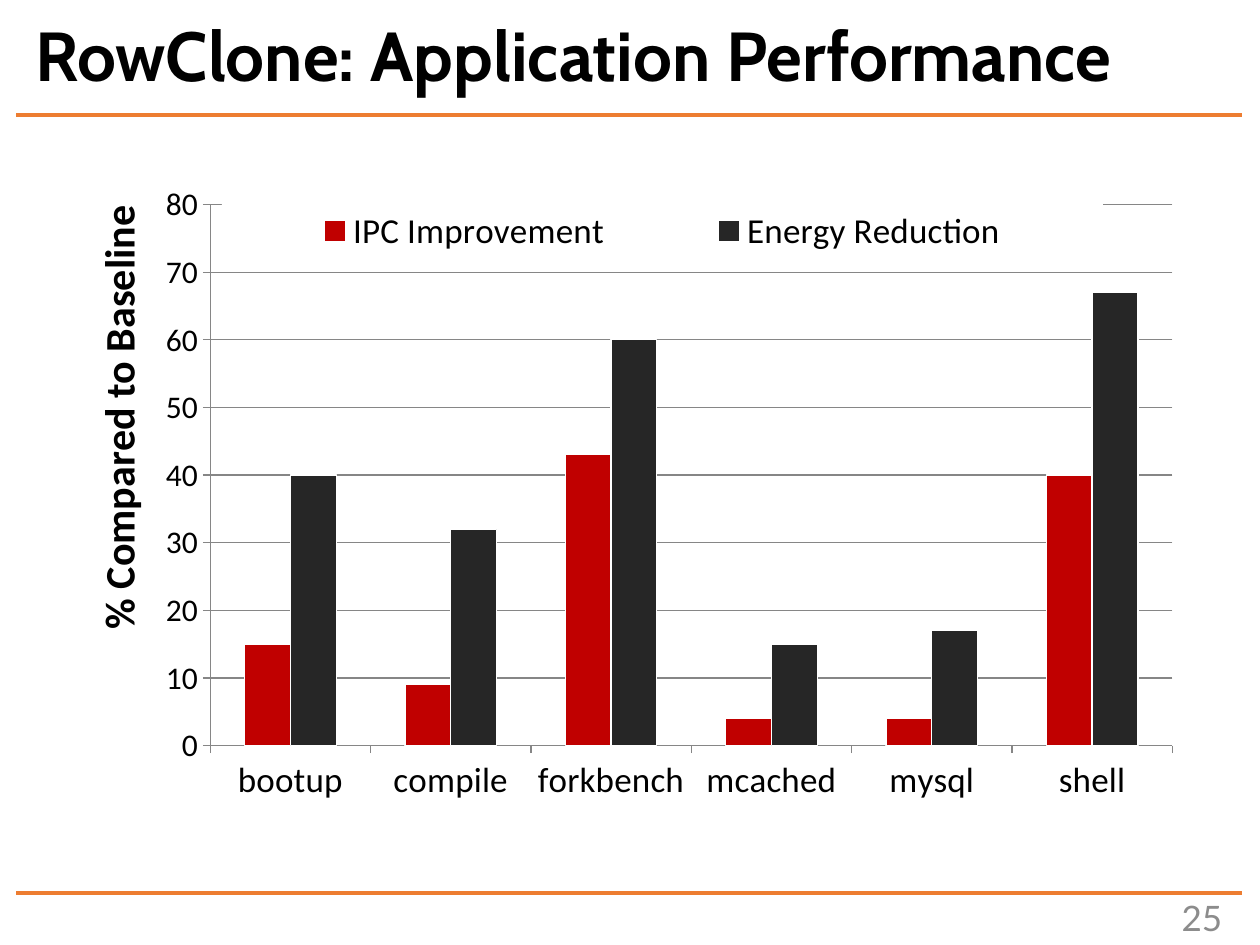
"""Build the RowClone application performance slide with its clustered column chart."""
from lxml import etree
from pptx import Presentation
from pptx import util as u
from pptx.chart import data as cd
from pptx.dml.color import RGBColor
from pptx.enum import chart as ec, shapes, text
from pptx.oxml.ns import qn

Pt = u.Pt
COLORS = {"accent": "ED7D31", "ipc": "C00000", "energy": "262626", "grid": "868686",
          "number": "8C8C8C", "black": "000000", "white": "FFFFFF"}


def rgb(name):
    return RGBColor.from_string(COLORS[name])


def set_layout(parent, index, **values):
    for old in parent.findall(qn("c:layout")):
        parent.remove(old)
    layout = etree.Element(qn("c:layout"))
    manual = etree.SubElement(layout, qn("c:manualLayout"))
    for tag, value in values.items():
        etree.SubElement(manual, qn("c:" + tag)).set("val", str(value))
    parent.insert(index, layout)


prs = Presentation()
prs.slide_width, prs.slide_height = Pt(720), Pt(540)
s = prs.slides.add_slide(prs.slide_layouts[5])

title = s.shapes.title
title.left, title.top, title.width, title.height = Pt(13), Pt(10), Pt(700.5), Pt(47.5)
tf = title.text_frame
tf.auto_size = text.MSO_AUTO_SIZE.NONE
tf.vertical_anchor = text.MSO_ANCHOR.MIDDLE
p = tf.paragraphs[0]
p.alignment = text.PP_ALIGN.LEFT
p.line_spacing = 0.9
r = p.add_run()
r.text = "RowClone: Application Performance"
r.font.name, r.font.size, r.font.bold = "Cabin", Pt(39.6), True
r.font.color.rgb = rgb("black")

for y in (65.5, 510.5):
    rule = s.shapes.add_connector(shapes.MSO_CONNECTOR.STRAIGHT, Pt(9.4), Pt(y), Pt(710), Pt(y))
    rule.line.color.rgb = rgb("accent")
    rule.line.width = Pt(2.25)
    etree.SubElement(rule._element.spPr, qn("a:effectLst"))

number = s.shapes.add_textbox(Pt(628), Pt(510), Pt(77.5), Pt(28.75))
tf = number.text_frame
tf.word_wrap = True
tf.vertical_anchor = text.MSO_ANCHOR.MIDDLE
p = tf.paragraphs[0]
p.alignment = text.PP_ALIGN.RIGHT
r = p.add_run()
r.text = "25"
r.font.name, r.font.size = "Lato", Pt(20)
r.font.color.rgb = rgb("number")

data = cd.CategoryChartData()
data.categories = ["bootup", "compile", "forkbench", "mcached", "mysql", "shell"]
data.add_series("IPC Improvement", (15, 9, 43, 4, 4, 40))
data.add_series("Energy Reduction", (40, 32, 60, 15, 17, 67))
chart = s.shapes.add_chart(ec.XL_CHART_TYPE.COLUMN_CLUSTERED,
                           Pt(27.4), Pt(98), Pt(662.4), Pt(379.4), data).chart
chart.has_title = False
chart.font.name, chart.font.size = "Calibri", Pt(18)
chart.font.color.rgb = rgb("black")

plot = chart.plots[0]
plot.gap_width, plot.overlap, plot.vary_by_categories = 150, 0, False
for series, name in zip(plot.series, ("ipc", "energy")):
    series.format.fill.solid()
    series.format.fill.fore_color.rgb = rgb(name)
    series.format.line.color.rgb = rgb("white")
    series.format.line.width = Pt(0.75)

cat_axis, val_axis = chart.category_axis, chart.value_axis
cat_axis.tick_labels.font.size = Pt(20)
val_axis.tick_labels.font.size = Pt(18)
val_axis.minimum_scale, val_axis.maximum_scale, val_axis.major_unit = 0, 80, 10
val_axis.has_major_gridlines = True
for axis in (cat_axis, val_axis):
    axis.major_tick_mark = ec.XL_TICK_MARK.OUTSIDE
    axis.format.line.color.rgb = rgb("grid")
    axis.format.line.width = Pt(0.75)
val_axis.major_gridlines.format.line.color.rgb = rgb("grid")
val_axis.major_gridlines.format.line.width = Pt(0.75)

axis_title = val_axis.axis_title
tf = axis_title.text_frame
r = tf.paragraphs[0].add_run()
r.text = "% Compared to Baseline"
r.font.name, r.font.size, r.font.bold = "Calibri", Pt(24), True
r.font.color.rgb = rgb("black")
body = tf._txBody.find(qn("a:bodyPr"))
body.set("rot", "-5400000")
body.set("vert", "horz")
set_layout(axis_title._element, 1, xMode="edge", yMode="edge", x=0.03, y=0.04)

chart.has_legend = True
legend = chart.legend
legend.position = ec.XL_LEGEND_POSITION.RIGHT
legend.include_in_layout = False
legend.font.name, legend.font.size = "Calibri", Pt(20)
legend.font.color.rgb = rgb("black")
box = etree.Element(qn("c:spPr"))
fill = etree.SubElement(box, qn("a:solidFill"))
etree.SubElement(fill, qn("a:srgbClr")).set("val", COLORS["white"])
legend._element.find(qn("c:overlay")).addnext(box)
set_layout(legend._element, 1, xMode="edge", yMode="edge", x=0.15, y=0.04, w=0.76, h=0.1)

set_layout(chart._chartSpace.chart.plotArea, 0, layoutTarget="inner", xMode="edge",
           yMode="edge", x=0.14, y=0.05, w=0.83, h=0.815)

prs.save("out.pptx")
